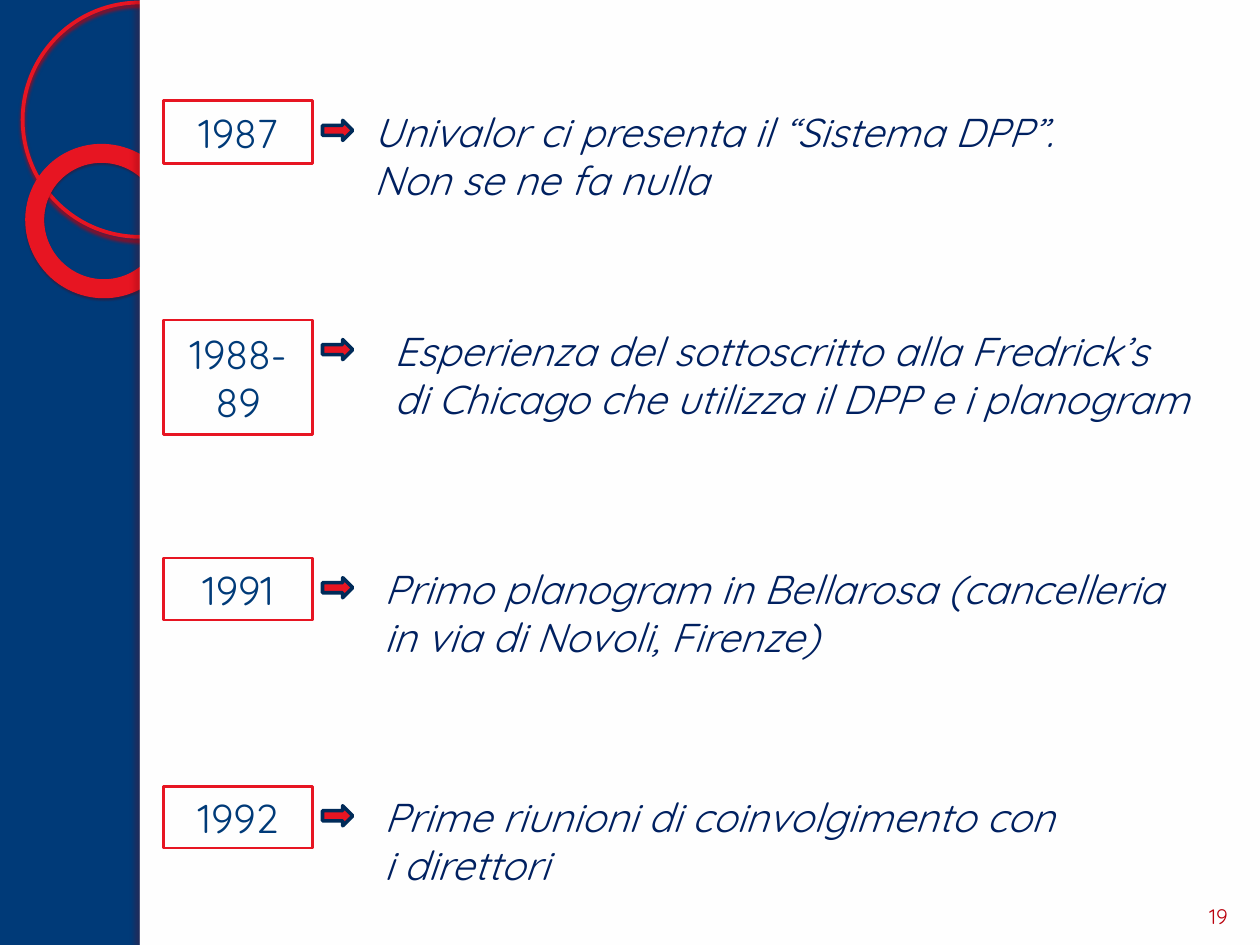
"""Build a timeline slide: years in boxes, arrows and notes beside a ringed side band."""
from lxml import etree
from pptx import Presentation
from pptx.dml.color import RGBColor
from pptx.enum.shapes import MSO_SHAPE
from pptx.enum.text import MSO_ANCHOR, PP_ALIGN
from pptx.oxml import parse_xml
from pptx.oxml.ns import nsdecls, qn
from pptx.util import Inches, Pt

RECT, OVAL = MSO_SHAPE.RECTANGLE, MSO_SHAPE.OVAL
DONUT, ARROW = MSO_SHAPE.DONUT, MSO_SHAPE.RIGHT_ARROW
LEFT, CENTER = PP_ALIGN.LEFT, PP_ALIGN.CENTER
TOP, MIDDLE, BOTTOM = MSO_ANCHOR.TOP, MSO_ANCHOR.MIDDLE, MSO_ANCHOR.BOTTOM
NAVY, INK, EDGE = "003A78", "002060", "002B59"
RED, DARK_RED, WHITE = "E71522", "BA000C", "FEFEFE"
FONT = "Quicksand"

prs = Presentation()
prs.slide_width, prs.slide_height = Inches(10), Inches(7.5)
col = prs.slide_width / 10
s = prs.slides.add_slide(prs.slide_layouts[6])


def rgb(value):
    return RGBColor.from_string(value)


def add(kind, box, fill=None, line=None, width=0, shadow=None):
    sp = s.shapes.add_shape(kind, *(round(v * col) for v in box))
    sp.shadow.inherit = False
    if fill:
        sp.fill.solid()
        sp.fill.fore_color.rgb = rgb(fill)
    else:
        sp.fill.background()
    if line:
        sp.line.color.rgb = rgb(line)
        sp.line.width = Pt(width)
    else:
        sp.line.fill.background()
    if shadow:
        color, alpha, blur, dist, angle = shadow
        effects = sp._element.spPr.find(qn("a:effectLst"))
        outer = parse_xml(
            f'<a:outerShdw {nsdecls("a")} blurRad="{Pt(blur)}" dist="{Pt(dist)}" '
            f'dir="{angle * 60000}" algn="t" rotWithShape="0"/>')
        clr = etree.SubElement(outer, qn("a:srgbClr"), val=color)
        etree.SubElement(clr, qn("a:alpha"), val=str(alpha * 1000))
        effects.append(outer)
    return sp


s.background.fill.solid()
s.background.fill.fore_color.rgb = rgb(NAVY)
add(OVAL, (0.18, 0.02, 1.86, 1.86), None, RED, 2.15, (DARK_RED, 85, 2, 2, 90))
ring = add(DONUT, (0.2, 1.15, 1.23, 1.21), RED, RED, 0.58, ("5D0006", 35, 1, 1.2, 75))
ring.adjustments[0] = 0.118
ring.rotation = 38.6
add(RECT, (1.11, 0, 8.89, 7.5), WHITE)
add(RECT, (1.11, 0, 0.08, 7.5), WHITE, shadow=("78050C", 25, 3, 3, 180))

events = [
    ("1987", 0.8, 0.5, 2.87, 6.07,
     "Univalor ci presenta il “Sistema DPP”.\nNon se ne fa nulla"),
    ("1988-89", 2.54, 0.91, 3.03, 6.97,
     "Esperienza del sottoscritto alla Fredrick’s\n"
     "di Chicago che utilizza il DPP e i planogram"),
    ("1991", 4.43, 0.49, 2.95, 6.69,
     "Primo planogram in Bellarosa (cancelleria in via di Novoli, Firenze)"),
    ("1992", 6.24, 0.49, 2.95, 5.95,
     "Prime riunioni di coinvolgimento con\ni direttori"),
]
texts = []
for year, top, height, left, width, note in events:
    sp = add(RECT, (1.3, top, 1.18, height), None, RED, 1.5)
    texts.append((sp, year, 23, NAVY, False, CENTER, MIDDLE))
    add(ARROW, (2.56, top + 0.155, 0.24, 0.16), RED, EDGE, 2)
    sp = s.shapes.add_textbox(*(round(v * col) for v in (left, top, width, 0.88)))
    texts.append((sp, note, 23, INK, True, LEFT, TOP))

sp = s.shapes.add_textbox(*(round(v * col) for v in (9.42, 6.9, 0.5, 0.52)))
texts.append((sp, "19", 12, DARK_RED, False, CENTER, BOTTOM))

for sp, text, size, color, italic, align, anchor in texts:
    tf = sp.text_frame
    tf.text = text
    tf.word_wrap = True
    tf.vertical_anchor = anchor
    for p in tf.paragraphs:
        p.alignment = align
        for r in p.runs:
            r.font.name = FONT
            r.font.size = Pt(size)
            r.font.italic = italic
            r.font.color.rgb = rgb(color)

prs.save("out.pptx")
